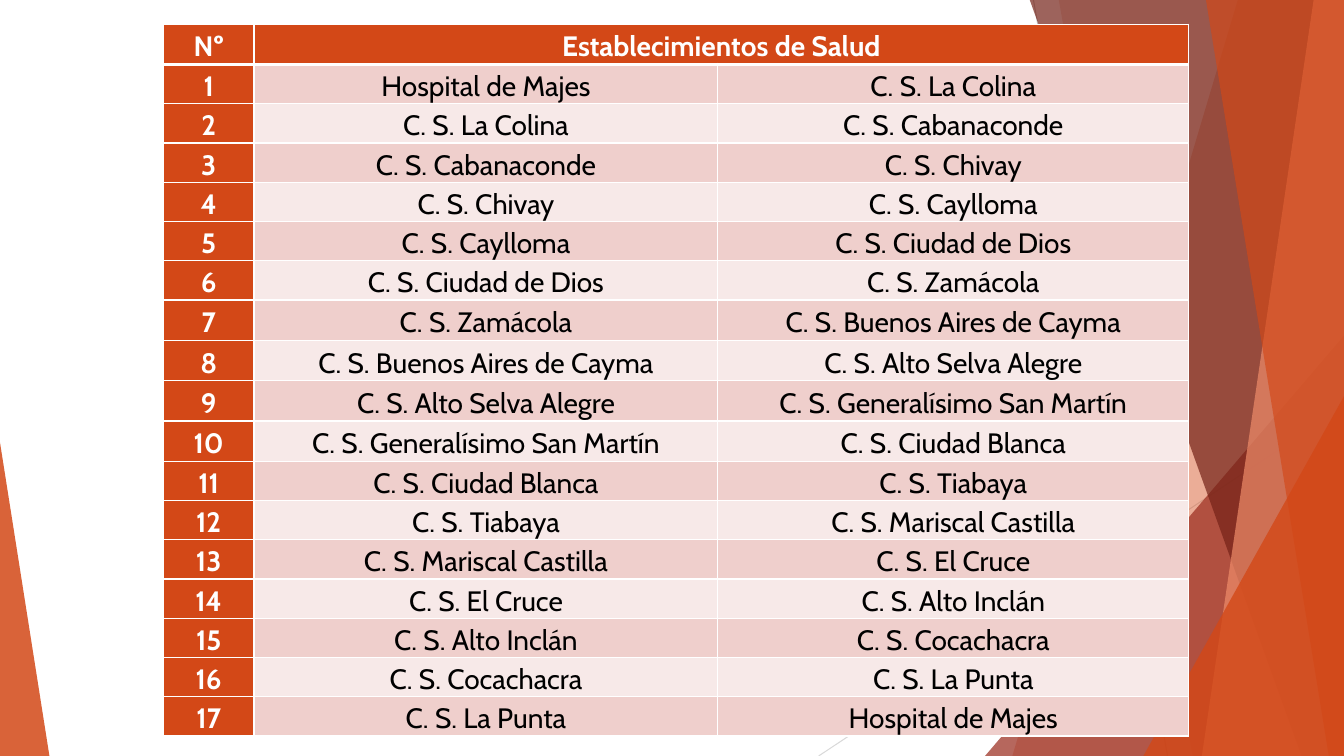
import pptx
import pptx.dml.color
import pptx.enum.shapes
import pptx.enum.text
import pptx.oxml
import pptx.oxml.ns
import pptx.util
from pptx.util import Inches

# Content
HEADER = ("Nº", "Establecimientos de Salud", "")
PLACES = [
    "Hospital de Majes", "C. S. La Colina", "C. S. Cabanaconde", "C. S. Chivay",
    "C. S. Caylloma", "C. S. Ciudad de Dios", "C. S. Zamácola",
    "C. S. Buenos Aires de Cayma", "C. S. Alto Selva Alegre",
    "C. S. Generalísimo San Martín", "C. S. Ciudad Blanca", "C. S. Tiabaya",
    "C. S. Mariscal Castilla", "C. S. El Cruce", "C. S. Alto Inclán",
    "C. S. Cocachacra", "C. S. La Punta",
]
FONT = "Cabin"
WHITE, BLACK, ORANGE = "FFFFFF", "000000", "D34817"
BANDS = ("EFCFCC", "F7E9E8")
COLUMN_WIDTHS = (0.9, 4.6, 4.67)
ROW_HEIGHT, TALL_HEIGHT = 0.33, 0.4
TALL_ROWS = (0, 7, 8, 9, 10)

# Background: thin lines (x1, y1, x2, y2, colour)
LINES = [(10.25, 0, 11.58, 7.5, "BFBFBF"), (13.33, 4.03, 8.12, 7.5, "D9D9D9")]
# Facets reach the right edge: (top x, bottom x, colour, opacity %)
# Triangles: (left, top, width, height, apex, colour, opacity %)
FACETS = [
    (12.28, 10.04, ORANGE, 30),
    (10.5, 11.83, ORANGE, 20),
    (9.77, 3.33, 3.56, 4.17, 1, "9B2D1F", 72),
    (10.21, 12.91, "742217", 70),
    (13.03, 11.92, "EF8C6A", 70),
    (11.96, 13.18, ORANGE, 65),
    (11.34, 3.93, 1.99, 3.57, 1, ORANGE, 80),
    (0, 4.39, 0.49, 3.11, 0, ORANGE, 85),
]
RIGHT, TOP, BOTTOM = 13.33, -0.01, 7.5


def rgb(color):
    return pptx.dml.color.RGBColor.from_string(color)


def add_line(slide, x1, y1, x2, y2, color):
    line = slide.shapes.add_connector(
        pptx.enum.shapes.MSO_CONNECTOR.STRAIGHT,
        Inches(x1), Inches(y1), Inches(x2), Inches(y2))
    line.line.color.rgb = rgb(color)
    line.line.width = pptx.util.Pt(0.75)
    pptx.oxml.ns.qn("a:effectLst")
    line._element.spPr.append(pptx.oxml.parse_xml(
        f'<a:effectLst {pptx.oxml.ns.nsdecls("a")}/>'))


def add_facet(slide, *geometry, color, opacity):
    if len(geometry) == 2:
        top_x, bottom_x = geometry
        points = [(Inches(x), Inches(y)) for x, y in (
            (top_x, TOP), (RIGHT, TOP), (RIGHT, BOTTOM), (bottom_x, BOTTOM))]
        builder = slide.shapes.build_freeform(*points[0])
        builder.add_line_segments(points[1:], close=True)
        shape = builder.convert_to_shape()
    else:
        *box, apex = geometry
        shape = slide.shapes.add_shape(
            pptx.enum.shapes.MSO_SHAPE.ISOSCELES_TRIANGLE, *map(Inches, box))
        shape.adjustments[0] = apex
    shape.shadow.inherit = False
    shape.line.fill.background()
    shape.fill.solid()
    shape.fill.fore_color.rgb = rgb(color)
    fill_color = shape._element.spPr.find(".//" + pptx.oxml.ns.qn("a:srgbClr"))
    fill_color.append(pptx.oxml.parse_xml(
        f'<a:alpha {pptx.oxml.ns.nsdecls("a")} val="{opacity * 1000}"/>'))


def set_borders(cell, top, bottom):
    properties = cell._tc.get_or_add_tcPr()
    for side, width in (("L", 1), ("R", 1), ("T", top), ("B", bottom)):
        properties.append(pptx.oxml.parse_xml(
            f'<a:ln{side} {pptx.oxml.ns.nsdecls("a")} w="{pptx.util.Pt(width)}">'
            f'<a:solidFill><a:srgbClr val="{WHITE}"/></a:solidFill></a:ln{side}>'))


def fill_cell(cell, text, row, column):
    strong = row == 0 or column == 0
    set_borders(cell, top=3 if row == 1 else 1, bottom=3 if row == 0 else 1)
    cell.fill.solid()
    cell.fill.fore_color.rgb = rgb(ORANGE if strong else BANDS[(row - 1) % 2])
    cell.margin_left = cell.margin_right = Inches(0.04)
    cell.margin_top = cell.margin_bottom = 0
    cell.vertical_anchor = pptx.enum.text.MSO_ANCHOR.MIDDLE
    cell.text = text
    paragraph = cell.text_frame.paragraphs[0]
    paragraph.alignment = pptx.enum.text.PP_ALIGN.CENTER
    paragraph.line_spacing = 1.15
    paragraph.font.name = FONT
    paragraph.font.size = pptx.util.Pt(20)
    paragraph.font.bold = strong
    paragraph.font.color.rgb = rgb(WHITE if strong else BLACK)


def add_places_table(slide):
    # The right column is the left one moved up by one place
    next_places = PLACES[1:] + PLACES[:1]
    rows = [HEADER] + [(str(number), place, next_place) for number, (place, next_place)
                       in enumerate(zip(PLACES, next_places), 1)]
    table = slide.shapes.add_table(
        len(rows), len(COLUMN_WIDTHS), Inches(1.62), Inches(0.24),
        Inches(sum(COLUMN_WIDTHS)), Inches(6.99)).table
    for column, width in zip(table.columns, COLUMN_WIDTHS):
        column.width = Inches(width)
    for r, texts in enumerate(rows):
        table.rows[r].height = Inches(TALL_HEIGHT if r in TALL_ROWS else ROW_HEIGHT)
        for c, text in enumerate(texts):
            fill_cell(table.cell(r, c), text, r, c)
    table.cell(0, 1).merge(table.cell(0, 2))


def main():
    presentation = pptx.Presentation()
    presentation.slide_width = Inches(13.33)
    presentation.slide_height = Inches(7.5)
    slide = presentation.slides.add_slide(presentation.slide_layouts[6])
    for line in LINES:
        add_line(slide, *line)
    for *geometry, color, opacity in FACETS:
        add_facet(slide, *geometry, color=color, opacity=opacity)
    add_places_table(slide)
    presentation.save("out.pptx")


if __name__ == "__main__":
    main()
